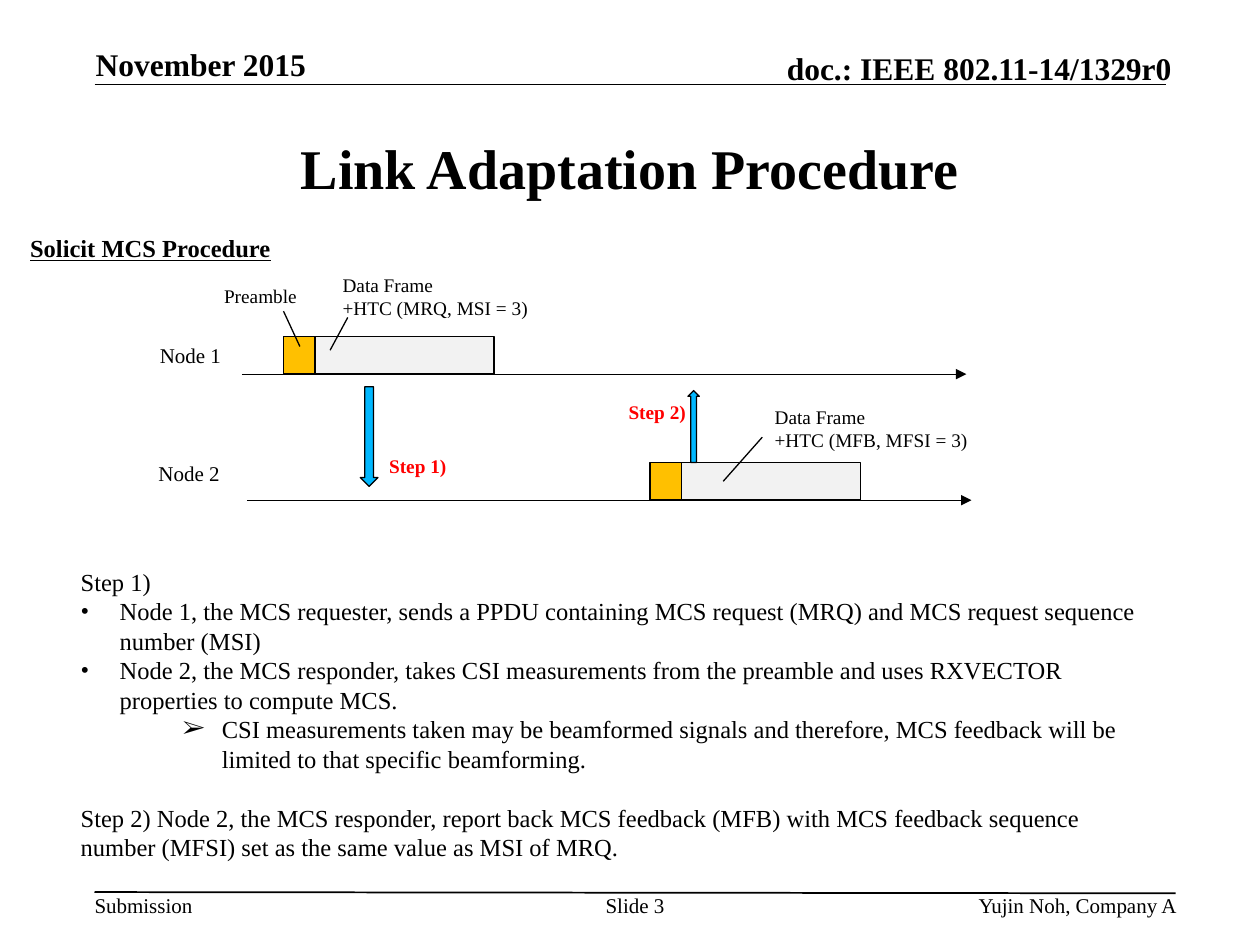
from dataclasses import dataclass

from lxml import etree
from pptx import Presentation
from pptx.dml.color import RGBColor
from pptx.enum import shapes, text
from pptx.oxml import ns
from pptx.util import Inches, Pt


@dataclass(frozen=True)
class Theme:
    font: str = "Times New Roman"
    ink: str = "000000"
    step: str = "FF0000"
    preamble: str = "FFC000"
    data: str = "F2F2F2"
    arrow: str = "00B8FF"
    title: int = 32
    header: int = 18
    body: int = 14
    node: int = 12
    label: int = 11
    rule: float = 1
    stroke: float = 0.75


THEME = Theme()
LEFT, CENTER, RIGHT = text.PP_ALIGN.LEFT, text.PP_ALIGN.CENTER, text.PP_ALIGN.RIGHT
TOP, BOTTOM = text.MSO_ANCHOR.TOP, text.MSO_ANCHOR.BOTTOM
RECT, DOWN = shapes.MSO_SHAPE.RECTANGLE, shapes.MSO_SHAPE.DOWN_ARROW


@dataclass(frozen=True)
class Label:
    words: str
    box: tuple[float, float, float, float]
    size: int = THEME.label
    color: str = THEME.ink
    bold: bool = False
    underline: bool = False
    align: text.PP_ALIGN = LEFT
    anchor: text.MSO_ANCHOR = TOP
    inset: bool = True


@dataclass(frozen=True)
class Line:
    start: tuple[float, float]
    end: tuple[float, float]
    width: float = THEME.stroke
    arrow: bool = False


@dataclass(frozen=True)
class Block:
    kind: shapes.MSO_SHAPE
    box: tuple[float, float, float, float]
    fill: str
    rotation: int = 0


@dataclass(frozen=True)
class Item:
    words: str
    bullet: str = ""
    level: int = 0
    indent: float = 0
    before: int = 0


def frame_blocks(left: float, top: float) -> list[Block]:
    return [
        Block(RECT, (left, top, 0.25, 0.3), THEME.preamble),
        Block(RECT, (left + 0.25, top, 1.42, 0.3), THEME.data),
    ]


RULES = [
    Line((0.75, 0.67), (9.25, 0.67), THEME.rule),
    Line((0.75, 7.08), (9.33, 7.09), THEME.rule),
]
MARGINALS = [
    Label("Submission", (0.75, 7.08, 0.78, 0.2), THEME.node, inset=False),
    Label("doc.: IEEE 802.11-14/1329r0", (5.47, 0.39, 3.83, 0.3), THEME.header,
          bold=True, align=RIGHT, anchor=BOTTOM, inset=False),
    Label("Slide 3", (4.75, 7.08, 0.58, 0.4), THEME.node, align=CENTER, inset=False),
    Label("Yujin Noh, Company A", (5.86, 7.08, 3.48, 0.2), THEME.node,
          align=RIGHT, inset=False),
    Label("November 2015", (0.76, 0.36, 2.05, 0.3), THEME.header,
          bold=True, anchor=BOTTOM, inset=False),
]
TIMELINES = [
    Line((1.92, 2.97), (7.67, 2.97), arrow=True),
    Line((1.96, 3.97), (7.71, 3.97), arrow=True),
]
BLOCKS = [
    *frame_blocks(2.25, 2.67),
    *frame_blocks(5.16, 3.67),
    Block(DOWN, (2.86, 3.07, 0.14, 0.79), THEME.arrow),
    Block(DOWN, (5.46, 3.1, 0.09, 0.57), THEME.arrow, 180),
]
LEADERS = [
    Line((2.38, 2.75), (2.25, 2.47)),
    Line((2.62, 2.78), (2.76, 2.52)),
    Line((5.74, 3.82), (6.05, 3.47)),
]
LABELS = [
    Label("Node 1", (1.17, 2.67, 0.7, 0.3), THEME.node),
    Label("Node 2", (1.16, 3.61, 0.7, 0.3), THEME.node),
    Label("Preamble", (1.68, 2.21, 0.8, 0.29)),
    Label("Data Frame\n+HTC (MRQ, MSI = 3)", (2.62, 2.12, 1.69, 0.47)),
    Label("Data Frame\n+HTC (MFB, MFSI = 3)", (6.05, 3.17, 1.74, 0.47)),
    Label("Solicit MCS Procedure", (0.14, 1.8, 2.12, 0.34), THEME.body,
          bold=True, underline=True),
    Label("Step 1)", (2.99, 3.56, 0.66, 0.29), color=THEME.step, bold=True),
    Label("Step 2)", (4.89, 3.13, 0.66, 0.29), color=THEME.step, bold=True),
]
STEPS = [
    Item("Step 1)"),
    Item("Node 1, the MCS requester, sends a PPDU containing MCS request (MRQ) "
         "and MCS request sequence number (MSI)", "•", indent=0.31),
    Item("Node 2, the MCS responder, takes CSI measurements from the preamble "
         "and uses RXVECTOR properties to compute MCS.", "•", indent=0.31),
    Item("CSI measurements taken may be beamformed signals and therefore, "
         "MCS feedback will be limited to that specific beamforming.",
         "➢", level=1, indent=1.12),
    Item("Step 2) Node 2, the MCS responder, report back MCS feedback (MFB) "
         "with MCS feedback sequence number (MFSI) set as the same value as "
         "MSI of MRQ.", before=17),
]


def place(shape, box: tuple[float, float, float, float]) -> None:
    shape.left, shape.top, shape.width, shape.height = map(Inches, box)


def style_runs(paragraph, size: int, color: str = THEME.ink,
               bold: bool = False, underline: bool = False) -> None:
    for run in paragraph.runs:
        run.font.name = THEME.font
        run.font.size = Pt(size)
        run.font.bold = bold
        run.font.underline = underline
        run.font.color.rgb = RGBColor.from_string(color)


def draw_label(slide, label: Label) -> None:
    frame = slide.shapes.add_textbox(*map(Inches, label.box)).text_frame
    frame.text = label.words
    frame.word_wrap = not label.inset and label.align != LEFT
    frame.vertical_anchor = label.anchor
    if not label.inset:
        frame.margin_left = frame.margin_right = 0
        frame.margin_top = frame.margin_bottom = 0
    for paragraph in frame.paragraphs:
        paragraph.alignment = label.align
        style_runs(paragraph, label.size, label.color, label.bold, label.underline)


def draw_line(slide, line: Line) -> None:
    connector = slide.shapes.add_connector(
        shapes.MSO_CONNECTOR.STRAIGHT, *map(Inches, line.start + line.end))
    connector.line.width = Pt(line.width)
    connector.line.color.rgb = RGBColor.from_string(THEME.ink)
    if line.arrow:
        etree.SubElement(connector.line._get_or_add_ln(), ns.qn("a:tailEnd"),
                         type="triangle")
    etree.SubElement(connector._element.spPr, ns.qn("a:effectLst"))


def draw_block(slide, block: Block) -> None:
    shape = slide.shapes.add_shape(block.kind, *map(Inches, block.box))
    shape.shadow.inherit = False
    shape.rotation = block.rotation
    shape.fill.solid()
    shape.fill.fore_color.rgb = RGBColor.from_string(block.fill)
    shape.line.width = Pt(THEME.stroke)
    shape.line.color.rgb = RGBColor.from_string(THEME.ink)


def set_bullet(paragraph, item: Item) -> None:
    properties = paragraph._p.get_or_add_pPr()
    properties.set("marL", str(Inches(item.indent)))
    properties.set("indent", str(Inches(-0.31 if item.bullet else 0)))
    if item.bullet:
        color = etree.SubElement(properties, ns.qn("a:buClr"))
        etree.SubElement(color, ns.qn("a:srgbClr"), val=THEME.ink)
        etree.SubElement(properties, ns.qn("a:buFont"), typeface=THEME.font)
        etree.SubElement(properties, ns.qn("a:buChar"), char=item.bullet)
    else:
        etree.SubElement(properties, ns.qn("a:buNone"))


def fill_steps(body, items: list[Item]) -> None:
    place(body, (0.54, 4.45, 8.71, 2.46))
    frame = body.text_frame
    frame.text = "\n".join(item.words for item in items)
    frame.word_wrap = True
    frame.auto_size = text.MSO_AUTO_SIZE.NONE
    for paragraph, item in zip(frame.paragraphs, items):
        paragraph.level = item.level
        set_bullet(paragraph, item)
        paragraph.space_before = Pt(item.before)
        style_runs(paragraph, THEME.body)


def main() -> None:
    deck = Presentation()
    deck.slide_width, deck.slide_height = Inches(10), Inches(7.5)
    slide = deck.slides.add_slide(deck.slide_layouts[1])
    title, body = slide.placeholders
    place(title, (0.75, 0.75, 8.5, 1.16))
    title.text_frame.text = "Link Adaptation Procedure"
    style_runs(title.text_frame.paragraphs[0], THEME.title, bold=True)
    fill_steps(body, STEPS)
    for line in RULES + TIMELINES:
        draw_line(slide, line)
    for block in BLOCKS:
        draw_block(slide, block)
    for leader in LEADERS:
        draw_line(slide, leader)
    for label in MARGINALS + LABELS:
        draw_label(slide, label)
    deck.save("out.pptx")


if __name__ == "__main__":
    main()
